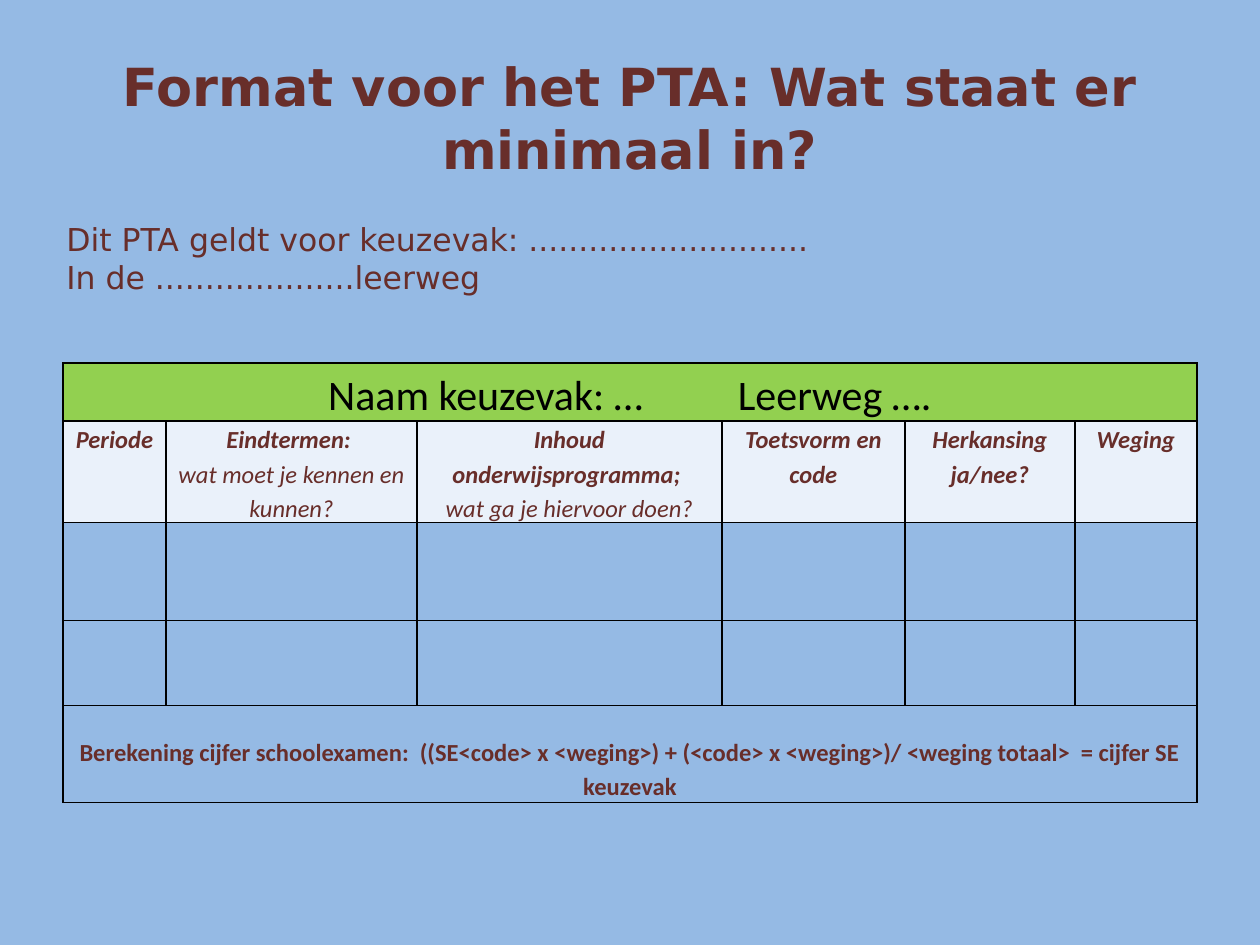
from lxml.etree import SubElement
from pptx import Presentation
from pptx.dml.color import RGBColor
from pptx.enum.text import MSO_ANCHOR, PP_ALIGN
from pptx.oxml.ns import qn
from pptx.util import Pt

# Content
TITLE = "Format voor het PTA: Wat staat er minimaal in?"
INTRO = ["Dit PTA geldt voor keuzevak: ............................",
         "In de ....................leerweg"]
NAMES = ["Naam keuzevak: …", " ", "Leerweg …."]
HEADS = [
    ["Periode"],
    ["Eindtermen: ", "wat moet je kennen en kunnen?"],
    ["Inhoud onderwijsprogramma; ", "wat ga je hiervoor doen?"],
    ["Toetsvorm en code"],
    ["Herkansing ja/nee?"],
    ["Weging"],
]
SUM = ("Berekening cijfer schoolexamen:  ((SE<code> x <weging>) + "
       "(<code> x <weging>)/ <weging totaal>  = cijfer SE keuzevak")

# Layout in px
COLS = [103, 251, 305, 183, 170, 122]
ROWS = [58, 101, 98, 85, 97]
INSET = 9
COLORS = {"back": "95BAE4", "text": "682E2A", "line": "000000",
          "name": "92D050", "head": "EAF1FA"}
SANS, BODY = "DejaVu Sans", "Calibri"


def px(n):
    return round(n * 914400 / 126)


def rgb(key):
    return RGBColor.from_string(COLORS[key])


def style(para, face, size, color="text", bold=False, italic=False):
    for run in para.runs:
        font = run.font
        font.name, font.size = face, Pt(size)
        font.bold, font.italic = bold, italic
        font.color.rgb = rgb(color)


def add_text(slide, box, lines, size, bold=False, align=PP_ALIGN.LEFT,
             anchor=MSO_ANCHOR.TOP):
    frame = slide.shapes.add_textbox(*map(px, box)).text_frame
    frame.word_wrap = True
    frame.vertical_anchor = anchor
    frame.text = "\n".join(lines)
    for para in frame.paragraphs:
        para.alignment = align
        style(para, SANS, size, bold=bold)


def set_cell(cell, fill=None):
    cell.margin_left = cell.margin_right = px(INSET)
    cell.margin_top = cell.margin_bottom = 0
    props = cell._tc.get_or_add_tcPr()
    for side in ("lnL", "lnR", "lnT", "lnB"):
        line = SubElement(props, qn("a:" + side), w=str(Pt(1)))
        solid = SubElement(line, qn("a:solidFill"))
        SubElement(solid, qn("a:srgbClr"), val=COLORS["line"])
    if fill:
        cell.fill.solid()
        cell.fill.fore_color.rgb = rgb(fill)
    else:
        cell.fill.background()


def center(cell):
    for para in cell.text_frame.paragraphs:
        para.alignment = PP_ALIGN.CENTER
        para.line_spacing = 1.15


def main():
    prs = Presentation()
    prs.slide_width, prs.slide_height = px(1260), px(945)
    slide = prs.slides.add_slide(prs.slide_layouts[6])
    slide.background.fill.solid()
    slide.background.fill.fore_color.rgb = rgb("back")

    # Title and intro
    add_text(slide, (63, 38, 1134, 158), [TITLE], 30, True,
             PP_ALIGN.CENTER, MSO_ANCHOR.MIDDLE)
    add_text(slide, (54, 214, 1150, 90), INTRO, 18)

    # Table grid
    table = slide.shapes.add_table(
        len(ROWS), len(COLS), px(63), px(363),
        px(sum(COLS)), px(sum(ROWS))).table
    table.first_row = table.horz_banding = False
    for col, width in zip(table.columns, COLS):
        col.width = px(width)
    fills = ["name", "head", None, None, None]
    for row, height, fill in zip(table.rows, ROWS, fills):
        row.height = px(height)
        for cell in row.cells:
            set_cell(cell, fill)
    last = len(COLS) - 1
    for r in (0, len(ROWS) - 1):
        table.cell(r, 0).merge(table.cell(r, last))

    # Name row: one wide space keeps the two fields apart
    cell = table.cell(0, 0)
    para = cell.text_frame.paragraphs[0]
    for part in NAMES:
        para.add_run().text = part
    style(para, BODY, 24, "line")
    para.runs[1].font._element.set("spc", "4880")
    center(cell)

    # Column heads: first line bold, explanation plain
    for c, lines in enumerate(HEADS):
        cell = table.cell(1, c)
        cell.text_frame.text = "\n".join(lines)
        for i, para in enumerate(cell.text_frame.paragraphs):
            style(para, BODY, 14, bold=i == 0, italic=True)
        center(cell)

    # Formula row
    cell = table.cell(len(ROWS) - 1, 0)
    cell.vertical_anchor = MSO_ANCHOR.BOTTOM
    cell.text_frame.text = SUM
    style(cell.text_frame.paragraphs[0], BODY, 14, bold=True)
    center(cell)

    prs.save("out.pptx")


if __name__ == "__main__":
    main()
